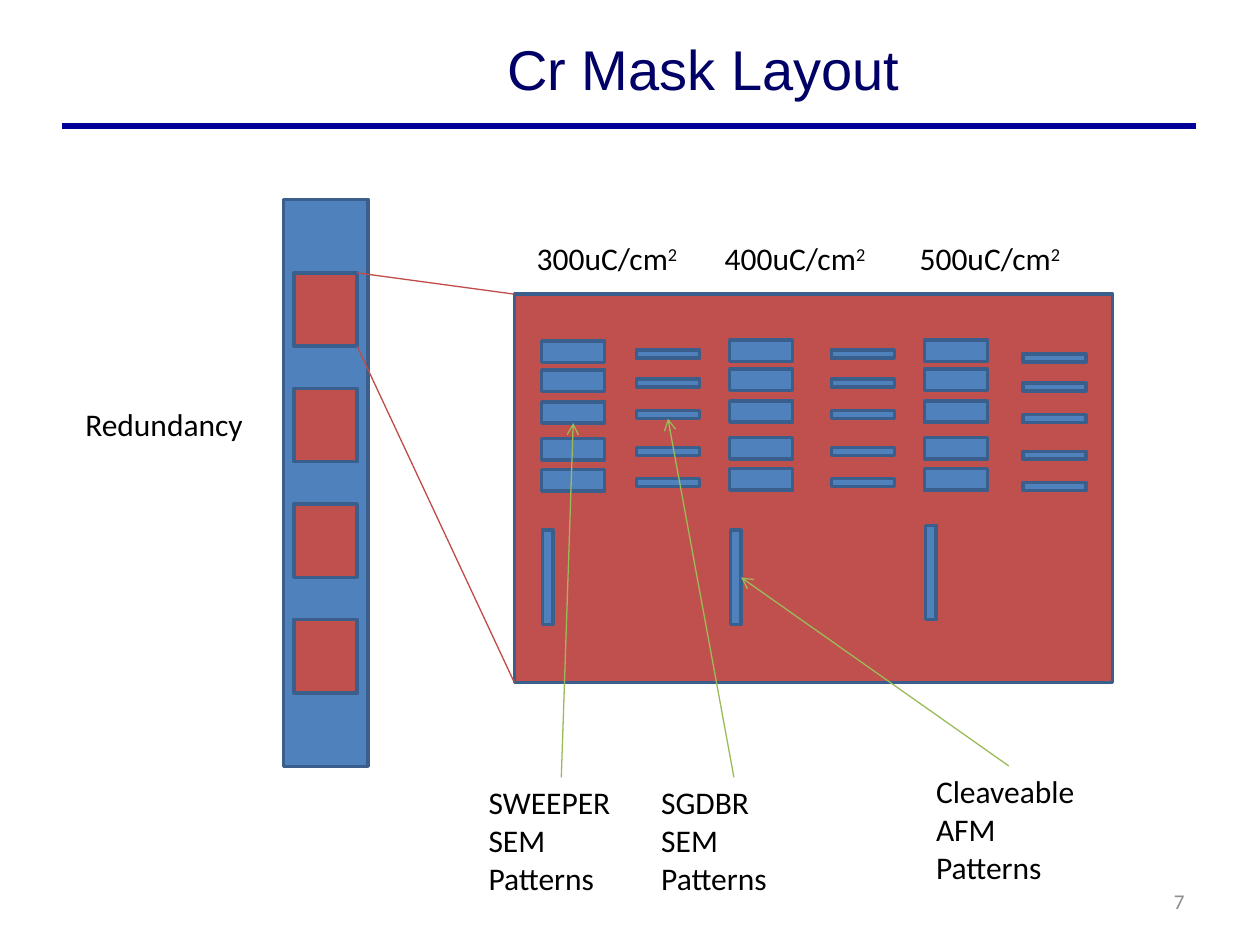
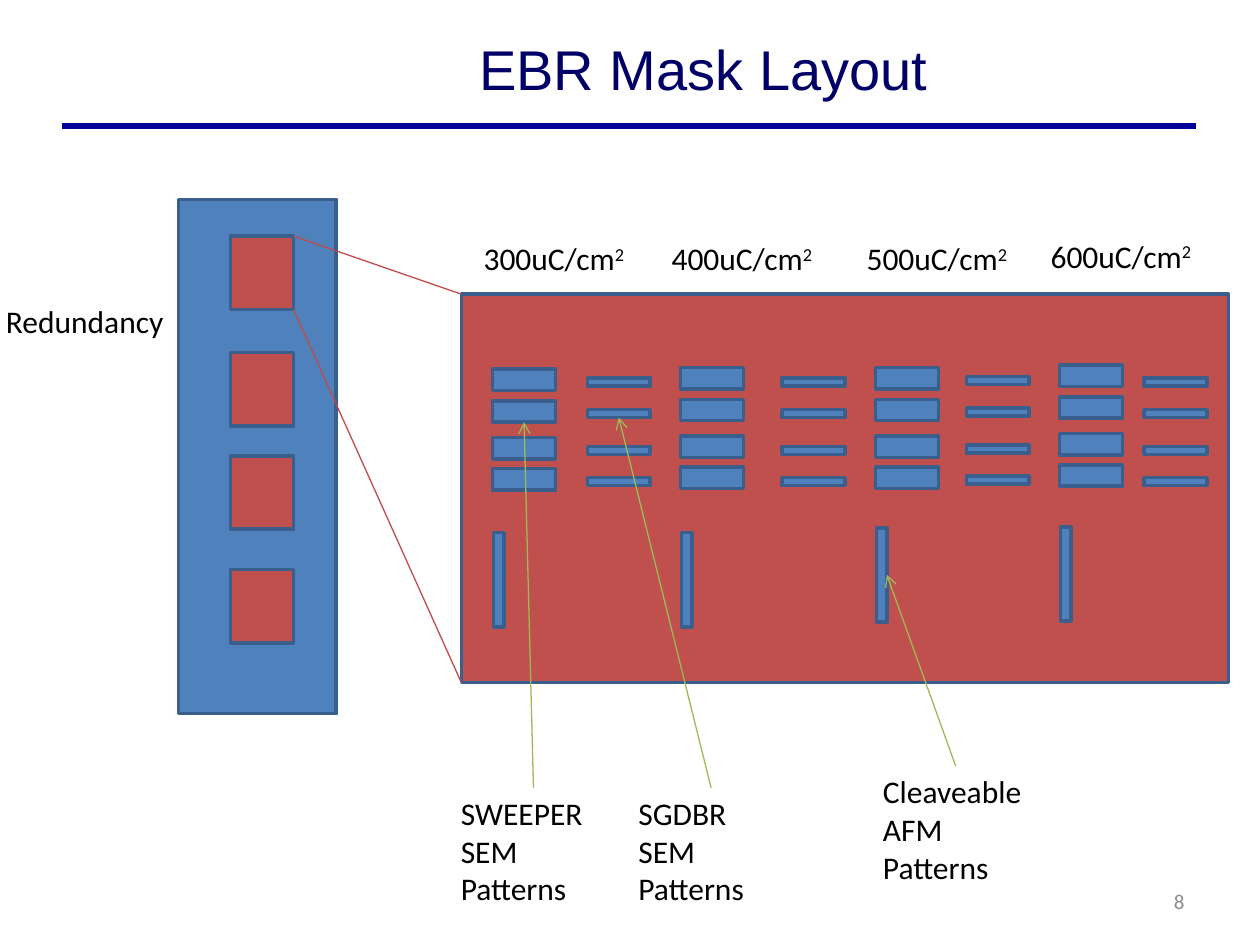
from lxml import etree
from pptx import Presentation
from pptx.dml.color import RGBColor
from pptx.enum.shapes import MSO_CONNECTOR, MSO_SHAPE
from pptx.enum.text import MSO_ANCHOR, PP_ALIGN
from pptx.oxml.ns import qn
from pptx.util import Cm, Pt

RECT = MSO_SHAPE.RECTANGLE
LINE = MSO_CONNECTOR.STRAIGHT
LEFT, MID, RIGHT = PP_ALIGN.LEFT, PP_ALIGN.CENTER, PP_ALIGN.RIGHT
HIGH, CENTRE = MSO_ANCHOR.TOP, MSO_ANCHOR.MIDDLE
TOP, BOTTOM, EAST = 0, 2, 3

COLORS = {
    "blue": "4F81BD", "red": "C0504D", "edge": "3A5F8C", "zoom": "BF4C48",
    "green": "9BBB59", "rule": "000099", "title": "000066",
    "text": "000000", "grey": "8C8C8C",
}
FORMATS = {
    "title": {"name": "Arial", "size": Pt(32)},
    "text": {"name": "Calibri", "size": Pt(18)},
    "grey": {"name": "Calibri", "size": Pt(12)},
}
ROWS = (0, 0.58, 1.22, 1.96, 2.59)

MASKS = [
    {
        "title": "Cr Mask Layout", "page": "7",
        "strip": (5.72, 4.02, 1.7, 11.43),
        "cells": (5.93, [5.5 + 2.33 * i for i in range(4)]),
        "panel": (10.37, 5.93, 12.06, 7.83),
        "rows": ROWS, "shift": 0.35,
        "doses": [
            ("300", 4.7, 10.92, 6.88, 12.83, 7.06, 10.69),
            ("400", 4.7, 14.71, 6.86, 16.76, 7.06, 10.69),
            ("500", 4.7, 18.64, 6.86, 20.62, 7.14, 10.59),
        ],
        "notes": [(9.6, 15.67), (13.08, 15.67), (18.62, 15.44)],
        "cleave": 1, "copies": (1.47, 8.05),
    },
    {
        "title": "EBR Mask Layout", "page": "8",
        "strip": (3.6, 4.02, 3.18, 10.37),
        "cells": (4.65, [4.76, 7.11, 9.19, 11.48]),
        "panel": (9.3, 5.93, 15.47, 7.83),
        "rows": ROWS[1:], "shift": 0.43,
        "doses": [
            ("300", 4.7, 9.93, 6.86, 11.84, 7.04, 10.74),
            ("400", 4.7, 13.72, 6.83, 15.77, 7.04, 10.74),
            ("500", 4.7, 17.65, 6.83, 19.48, 7.01, 10.64),
            ("600", 4.65, 21.36, 6.78, 23.06, 7.04, 10.62),
        ],
        "notes": [(9.04, 15.88), (12.62, 15.88), (17.55, 15.44)],
        "cleave": 2, "copies": (-0.13, 5.97),
    },
]
NOTES = [
    ["SWEEPER", "SEM Patterns"],
    ["SGDBR", "SEM Patterns"],
    ["Cleaveable", "AFM", "Patterns"],
]


class Deck:
    def __init__(self):
        self.file = Presentation()
        self.file.slide_width, self.file.slide_height = Cm(25.4), Cm(19.05)
        self.slide = None

    def color(self, key):
        return RGBColor.from_string(COLORS[key])

    def page(self, title, number):
        self.slide = self.file.slides.add_slide(self.file.slide_layouts[6])
        self.line((1.24, 2.54), (24.1, 2.54), "rule", 3)
        self.text((4.24, 0.2, 19.89, 2.34), [title], "title", MID, CENTRE)
        self.text((18.21, 17.65, 5.92, 1.02), [number], "grey", RIGHT, CENTRE)

    def rect(self, box, fill):
        shape = self.slide.shapes.add_shape(RECT, *map(Cm, box))
        shape.shadow.inherit = False
        shape.fill.solid()
        shape.fill.fore_color.rgb = self.color(fill)
        shape.line.color.rgb = self.color("edge")
        shape.line.width = Pt(2)
        return shape

    def line(self, start, end, color, width=0.75):
        link = self.slide.shapes.add_connector(LINE, *map(Cm, start + end))
        link.line.color.rgb = self.color(color)
        link.line.width = Pt(width)
        etree.SubElement(link._element.spPr, qn("a:effectLst"))
        return link

    def arrow(self, note, mark, side):
        link = self.line((0, 0), (0, 0), "green")
        link.begin_connect(note, TOP)
        link.end_connect(mark, side)
        tail = etree.SubElement(link.line._get_or_add_ln(), qn("a:tailEnd"))
        tail.set("type", "arrow")

    def text(self, box, lines, style="text", align=LEFT, anchor=HIGH, wrap=True):
        shape = self.slide.shapes.add_textbox(*map(Cm, box))
        frame = shape.text_frame
        frame.word_wrap = wrap
        frame.vertical_anchor = anchor
        for i, words in enumerate(lines):
            para = frame.add_paragraph() if i else frame.paragraphs[0]
            para.alignment = align
            base, _, power = words.partition("^")
            self.run(para, base, style)
            if power:
                run = self.run(para, power, style)
                run._r.get_or_add_rPr().set("baseline", "30000")
        return shape

    def run(self, para, words, style):
        run = para.add_run()
        run.text = words
        for key, value in FORMATS[style].items():
            setattr(run.font, key, value)
        run.font.color.rgb = self.color(style)
        return run

    def stack(self, x, y, rows, height):
        return [self.rect((x, y + row, 1.27, height), "blue") for row in rows]

    def mask(self, data):
        self.page(data["title"], data["page"])
        self.rect(data["strip"], "blue")
        x, tops = data["cells"]
        for y in tops:
            self.rect((x, y, 1.27, 1.48), "red")
        left, top, _, height = data["panel"]
        self.rect(data["panel"], "red")
        self.line((x + 1.27, tops[0]), (left, top), "zoom")
        self.line((x + 1.27, tops[0] + 1.48), (left, top + height), "zoom")

        wide, thin, sticks = [], [], []
        for dose, high, wx, wy, tx, ty, sy in data["doses"]:
            label = f"{dose}uC/cm^2"
            self.text((wx - data["shift"], high, 3.43, 1.02), [label])
            wide.append(self.stack(wx, wy, data["rows"], 0.43))
            thin.append(self.stack(tx, ty, data["rows"], 0.16))
            sticks.append(self.rect((wx + 0.02, sy, 0.21, 1.9), "blue"))

        third = data["rows"].index(ROWS[2])
        marks = [
            (wide[0][third], BOTTOM),
            (thin[0][third], BOTTOM),
            (sticks[data["cleave"]], EAST),
        ]
        for spot, lines, (mark, side) in zip(data["notes"], NOTES, marks):
            note = self.text((*spot, 3.43, 2.56), lines)
            self.arrow(note, mark, side)
        self.text((*data["copies"], 3.73, 1.02), ["Redundancy"], wrap=False)


def main():
    deck = Deck()
    for data in MASKS:
        deck.mask(data)
    deck.file.save("out.pptx")


if __name__ == "__main__":
    main()
